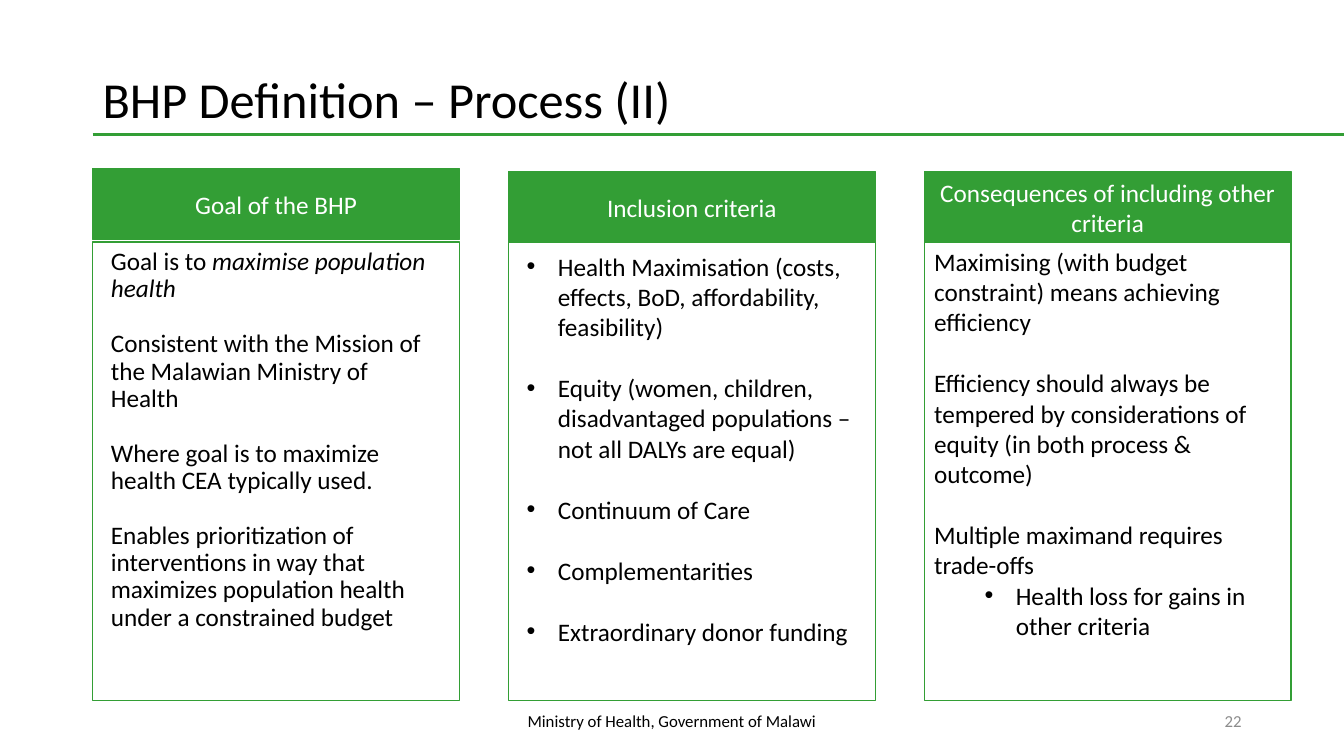
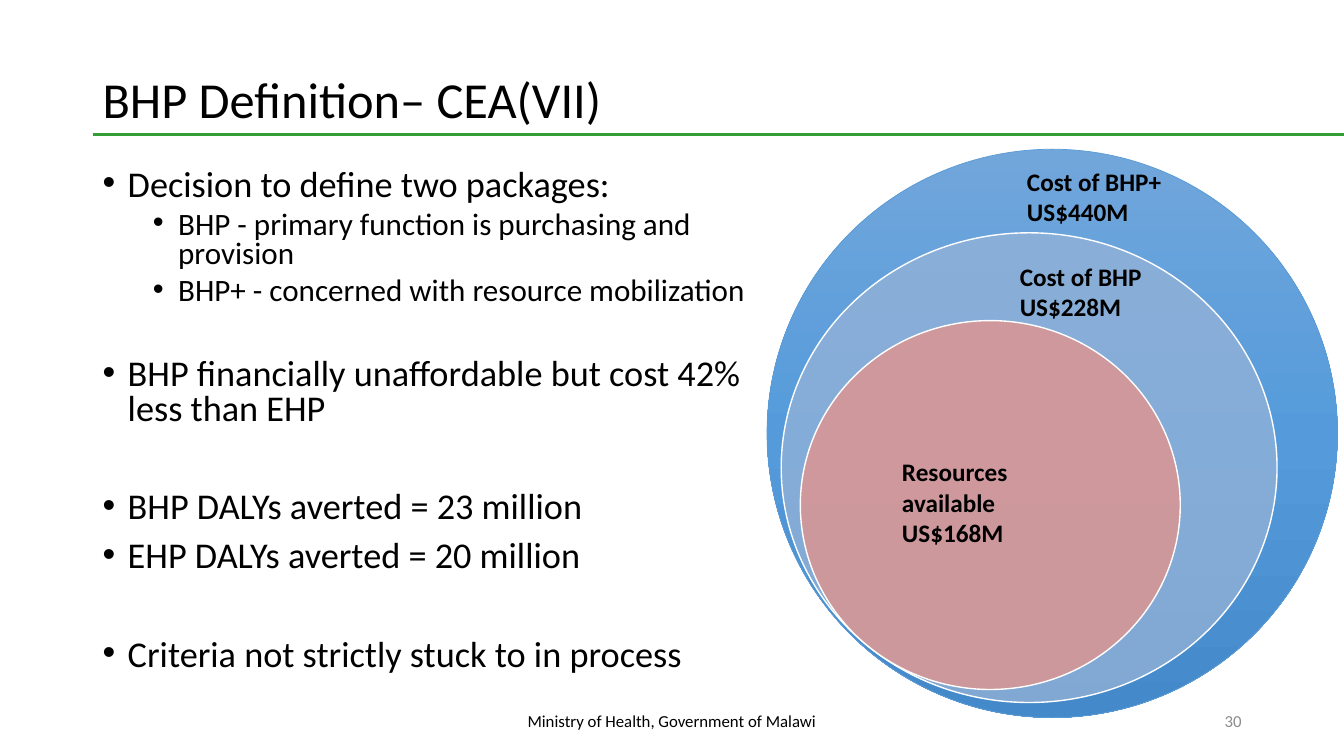
from copy import deepcopy
from dataclasses import dataclass

from lxml import etree
from pptx import Presentation
from pptx.dml.color import RGBColor
from pptx.enum.shapes import MSO_CONNECTOR, MSO_SHAPE
from pptx.enum.text import MSO_ANCHOR, PP_ALIGN
from pptx.oxml.ns import qn
from pptx.util import Pt

GREEN = RGBColor(0x33, 0x9E, 0x35)
BLACK = RGBColor(0x00, 0x00, 0x00)
WHITE = RGBColor(0xFF, 0xFF, 0xFF)
GREY = RGBColor(0x8C, 0x8C, 0x8C)
BLUE_LINE = RGBColor(0x5B, 0x9B, 0xD5)
BLUE_STOPS = [
    (0, RGBColor(0x71, 0xA6, 0xDB)),
    (0.5, RGBColor(0x55, 0x9B, 0xDB)),
    (1, RGBColor(0x44, 0x8A, 0xCA)),
]
PALE_BLUE = RGBColor(0x95, 0xB3, 0xD7)
PINK = RGBColor(0xD9, 0x96, 0x94)

LEFT, CENTER, RIGHT = PP_ALIGN.LEFT, PP_ALIGN.CENTER, PP_ALIGN.RIGHT
TOP, MIDDLE, BOTTOM = MSO_ANCHOR.TOP, MSO_ANCHOR.MIDDLE, MSO_ANCHOR.BOTTOM
RECTANGLE, OVAL = MSO_SHAPE.RECTANGLE, MSO_SHAPE.OVAL
STRAIGHT = MSO_CONNECTOR.STRAIGHT

FONT = "Calibri"
SLIDE_WIDTH, SLIDE_HEIGHT = 960, 540
MARGIN = 66.2
RULE_TOP = 96
FOOTER_TOP, FOOTER_HEIGHT = 500.4, 28.8
FOOTER_TEXT = "Ministry of Health, Government of Malawi"

COLUMN_PITCH, COLUMN_WIDTH = 297, 262
HEADING_HEIGHT = 51
PANEL_TOP, PANEL_HEIGHT = 172.8, 327.6


@dataclass
class Para:
    text: str
    before: float = 0
    size: float = 18
    bold: bool = False
    italic_tail: str = ""
    color: RGBColor = BLACK
    align: int = LEFT
    spacing: float = 1
    level: int = 0
    indent: float = 0
    hanging: float = 0


def add_bullet(paragraph, indent, hanging):
    properties = paragraph._p.get_or_add_pPr()
    properties.set("marL", str(Pt(indent)))
    properties.set("indent", str(-Pt(hanging)))
    etree.SubElement(properties, qn("a:buFont")).set("typeface", "Arial")
    etree.SubElement(properties, qn("a:buChar")).set("char", "•")


def add_run(paragraph, text, para, italic=False):
    run = paragraph.add_run()
    run.text = text
    run.font.name = FONT
    run.font.size = Pt(para.size)
    run.font.bold = para.bold
    run.font.italic = italic
    run.font.color.rgb = para.color


def write(frame, paras, anchor=TOP):
    frame.word_wrap = True
    frame.vertical_anchor = anchor
    for index, para in enumerate(paras):
        paragraph = frame.add_paragraph() if index else frame.paragraphs[0]
        if para.hanging:
            add_bullet(paragraph, para.indent, para.hanging)
        paragraph.level = para.level
        paragraph.alignment = para.align
        paragraph.line_spacing = para.spacing
        paragraph.space_before = Pt(para.before)
        add_run(paragraph, para.text, para)
        if para.italic_tail:
            add_run(paragraph, para.italic_tail, para, italic=True)


def add_text(slide, box, paras, anchor=TOP):
    write(slide.shapes.add_textbox(*map(Pt, box)).text_frame, paras, anchor)


def add_outlined(slide, kind, box, line_color, line_width=1):
    shape = slide.shapes.add_shape(kind, *map(Pt, box))
    shape.shadow.inherit = False
    shape.fill.background()
    shape.line.color.rgb = line_color
    shape.line.width = Pt(line_width)
    return shape


def add_slide(deck, title, number):
    slide = deck.slides.add_slide(deck.slide_layouts[6])
    rule = slide.shapes.add_connector(
        STRAIGHT, Pt(MARGIN), Pt(RULE_TOP), Pt(SLIDE_WIDTH), Pt(RULE_TOP))
    rule.line.color.rgb = GREEN
    rule.line.width = Pt(2.25)
    etree.SubElement(rule._element.spPr, qn("a:effectLst"))
    add_text(slide, (MARGIN, 14.4, 807, RULE_TOP - 14.4),
             [Para(title, size=36, spacing=0.9)], BOTTOM)
    add_text(slide, (318, FOOTER_TOP, 324, FOOTER_HEIGHT),
             [Para(FOOTER_TEXT, size=12, align=CENTER)], MIDDLE)
    add_text(slide, (678, FOOTER_TOP, 216, FOOTER_HEIGHT),
             [Para(number, size=12, color=GREY, align=RIGHT)], MIDDLE)
    return slide


def add_column(slide, index, heading, heading_top, insets, paras):
    left = MARGIN + index * COLUMN_PITCH
    header = add_outlined(
        slide, RECTANGLE, (left, heading_top, COLUMN_WIDTH, HEADING_HEIGHT), GREEN)
    header.fill.solid()
    header.fill.fore_color.rgb = GREEN
    write(header.text_frame, [Para(heading, color=WHITE, align=CENTER)], MIDDLE)

    panel = add_outlined(
        slide, RECTANGLE, (left, PANEL_TOP, COLUMN_WIDTH, PANEL_HEIGHT), GREEN)
    frame = panel.text_frame
    side, top = insets
    frame.margin_left = frame.margin_right = Pt(side)
    frame.margin_top = Pt(top)
    write(frame, paras)


def add_gradient_circle(slide, box):
    circle = add_outlined(slide, OVAL, box, BLUE_LINE, 0.5)
    circle.fill.gradient()
    circle.fill.gradient_angle = 270
    stop_list = circle._element.spPr.find(".//" + qn("a:gsLst"))
    stop_list.insert(1, deepcopy(stop_list[0]))
    for stop, (position, color) in zip(circle.fill.gradient_stops, BLUE_STOPS):
        stop.position = position
        stop.color.rgb = color


def add_clear_circle(slide, box, color, opacity):
    circle = add_outlined(slide, OVAL, box, WHITE)
    circle.fill.solid()
    circle.fill.fore_color.rgb = color
    tint = circle._element.spPr.find(qn("a:solidFill"))[0]
    etree.SubElement(tint, qn("a:alpha")).set("val", str(opacity * 1000))


def build_process(deck):
    slide = add_slide(deck, "BHP Definition – Process (II)", "22")

    def goal(text, before=19.8, tail=""):
        return Para(text, before, spacing=0.9, italic_tail=tail)

    def criterion(text, before=22):
        return Para(text, before, indent=22.3, hanging=22.3)

    add_column(slide, 0, "Goal of the BHP", 120.2, (13, 5), [
        goal("Goal is to ", 0, "maximise population health"),
        goal("Consistent with the Mission of the Malawian Ministry of Health"),
        goal("Where goal is to maximize health CEA typically used."),
        goal("Enables prioritization of interventions in way that maximizes "
             "population health under a constrained budget"),
    ])
    add_column(slide, 1, "Inclusion criteria", 122.4, (13, 6.5), [
        criterion("Health Maximisation (costs, effects, BoD, affordability, feasibility)", 0),
        criterion("Equity (women, children, disadvantaged populations – "
                  "not all DALYs are equal)"),
        criterion("Continuum of Care"),
        criterion("Complementarities"),
        criterion("Extraordinary donor funding"),
    ])
    add_column(slide, 2, "Consequences of including other criteria", 122.4, (7.2, 3), [
        Para("Maximising (with budget constraint) means achieving efficiency"),
        Para("Efficiency should always be tempered by considerations of equity "
             "(in both process & outcome)", 22),
        Para("Multiple maximand requires trade-offs", 22),
        Para("Health loss for gains in other criteria",
             level=1, indent=58.3, hanging=22.3),
    ])


def build_packages(deck):
    slide = add_slide(deck, "BHP Definition– CEA(VII)", "30")

    def point(text, before):
        return Para(text, before, 25.9, spacing=0.8, indent=18, hanging=18)

    def subpoint(text):
        return Para(text, 5, 22.2, spacing=0.8, level=1, indent=54, hanging=18)

    add_text(slide, (MARGIN, 117.4, 475.2, 369.4), [
        point("Decision to define two packages:", 0),
        subpoint("BHP - primary function is purchasing and provision"),
        subpoint("BHP+ - concerned with resource mobilization"),
        point("BHP financially unaffordable but cost 42% less than EHP", 36.7),
        point("BHP DALYs averted = 23 million", 45.3),
        point("EHP DALYs averted = 20 million", 10),
        point("Criteria not strictly stuck to in process", 45.3),
    ])

    add_gradient_circle(slide, (547.9, 106.6, 407.5, 406))
    add_clear_circle(slide, (558, 166.3, 354.2, 335.5), PALE_BLUE, 75)
    add_clear_circle(slide, (571.7, 229, 271.4, 263.5), PINK, 87)

    for box, label, amount in [
        ((726.5, 115.2, 118, 51), "Cost of BHP+", "US$440M"),
        ((721.4, 182.9, 111, 51), "Cost of BHP", "US$228M"),
        ((637.2, 322.6, 126, 73), "Resources available", "US$168M"),
    ]:
        add_text(slide, box, [Para(label, bold=True), Para(amount, bold=True)])


def main():
    deck = Presentation()
    deck.slide_width = Pt(SLIDE_WIDTH)
    deck.slide_height = Pt(SLIDE_HEIGHT)
    build_process(deck)
    build_packages(deck)
    deck.save("out.pptx")


if __name__ == "__main__":
    main()
